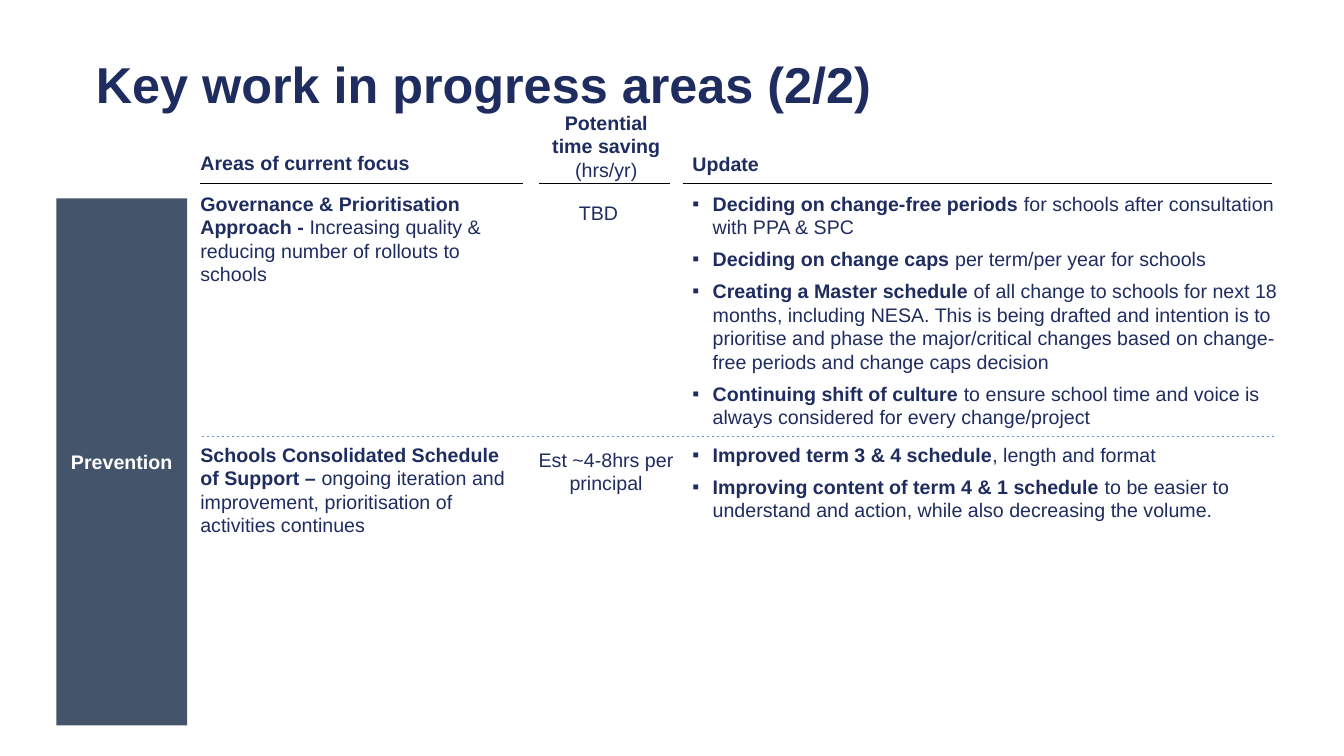
from lxml import etree
from pptx import Presentation
from pptx.dml.color import RGBColor
from pptx.enum import dml, shapes, text
from pptx.oxml import ns
from pptx.util import Cm, Pt

NAVY = RGBColor(0x1F, 0x2C, 0x5F)
SLATE = RGBColor(0x44, 0x54, 0x6A)
BLUE = RGBColor(0x5B, 0x9B, 0xD5)
BLACK = RGBColor(0, 0, 0)
WHITE = RGBColor(255, 255, 255)

# Each paragraph is a (bold, regular) pair.
TITLE = "Key work in progress areas (2/2)"
STAGE = "Prevention"
HEADERS = {
    "focus": [("Areas of current focus", "")],
    "saving": [("Potential time saving", ""), ("", "(hrs/yr)")],
    "update": [("Update", "")],
}
ROWS = [
    {
        "focus": [("Governance & Prioritisation Approach - ",
                   "Increasing quality & reducing number of rollouts to schools")],
        "saving": [("", "TBD")],
        "update": [
            ("Deciding on change-free periods ",
             "for schools after consultation with PPA & SPC"),
            ("Deciding on change caps ", "per term/per year for schools"),
            ("Creating a Master schedule ",
             "of all change to schools for next 18 months, including NESA. This is "
             "being drafted and intention is to prioritise and phase the "
             "major/critical changes based on change-free periods and change caps "
             "decision"),
            ("Continuing shift of culture ",
             "to ensure school time and voice is always considered for every "
             "change/project"),
        ],
    },
    {
        "focus": [("Schools Consolidated Schedule of Support – ",
                   "ongoing iteration and improvement, prioritisation of "
                   "activities continues")],
        "saving": [("", "Est ~4-8hrs per principal")],
        "update": [
            ("Improved term 3 & 4 schedule", ", length and format"),
            ("Improving content of term 4 & 1 schedule ",
             "to be easier to understand and action, while also decreasing the "
             "volume."),
        ],
    },
]

# Centimetres
COLUMNS = {"focus": (5.05, 8.13), "saving": (13.72, 3.12), "update": (17.45, 14.86)}
HEADER_TOPS = {"focus": 3.81, "saving": 2.79, "update": 3.84}
HEADER_RULES = [(5.05, 13.18), (13.59, 16.89), (17.2, 32.05)]
HEADER_RULE_Y = 4.62
ROW_TOPS = [4.83, 11.15]
ROW_HEIGHTS = [6.02, 2.39]
SAVING_BOXES = [(13.08, 5.06, 4.01), (13.08, 11.28, 4.39)]
DIVIDER = (5.08, 32.11, 11.0)
INDENT = 0.51


def write(sp, paragraphs, align=text.PP_ALIGN.LEFT, inset=0):
    tf = sp.text_frame
    tf.word_wrap = True
    tf.auto_size = text.MSO_AUTO_SIZE.NONE
    tf.vertical_anchor = text.MSO_ANCHOR.TOP
    tf.margin_left = tf.margin_right = Cm(inset)
    tf.margin_top = tf.margin_bottom = 0
    for i, parts in enumerate(paragraphs):
        p = tf.paragraphs[0] if i == 0 else tf.add_paragraph()
        p.alignment = align
        p.font.name, p.font.size = "Arial", Pt(14)
        p.font.color.rgb = NAVY
        for words, bold in zip(parts, (True, False)):
            if words:
                r = p.add_run()
                r.text, r.font.bold = words, bold


def place(sp, left, top, width, height):
    sp.left, sp.top, sp.width, sp.height = map(Cm, (left, top, width, height))


def add_text(s, left, top, width, height, paragraphs, **style):
    sp = s.shapes.add_textbox(*map(Cm, (left, top, width, height)))
    write(sp, paragraphs, **style)


def add_rule(s, x1, x2, y, color=BLACK):
    line = s.shapes.add_connector(
        shapes.MSO_CONNECTOR.STRAIGHT, *map(Cm, (x1, y, x2, y)))
    line.line.color.rgb = color
    line.line.width = Pt(0.5)
    etree.SubElement(line._element.spPr, ns.qn("a:effectLst"))
    return line


def add_bullets(sp):
    for p in sp.text_frame.paragraphs:
        p.space_before = Pt(6)
        pPr = p._p.get_or_add_pPr()
        pPr.set("marL", str(Cm(INDENT)))
        pPr.set("indent", str(-Cm(INDENT)))
        bullet = etree.Element(ns.qn("a:buChar"), char="▪")
        pPr.find(ns.qn("a:spcBef")).addnext(bullet)


def add_title(s):
    sp = s.shapes.title
    place(sp, 2.16, 1.73, 29.57, 0.91)
    tf = sp.text_frame
    tf.text = TITLE
    tf.auto_size = text.MSO_AUTO_SIZE.NONE
    tf.vertical_anchor = text.MSO_ANCHOR.MIDDLE
    p = tf.paragraphs[0]
    p.alignment, p.line_spacing = text.PP_ALIGN.LEFT, 0.9
    p.font.name, p.font.size, p.font.bold = "Arial", Pt(36), True
    p.font.color.rgb = NAVY


def add_stage(s):
    sp = s.shapes.add_shape(
        shapes.MSO_SHAPE.RECTANGLE, Cm(1.42), Cm(5.0), Cm(3.3), Cm(13.28))
    sp.shadow.inherit = False
    sp.fill.solid()
    sp.fill.fore_color.rgb = SLATE
    sp.line.fill.background()
    write(sp, [(STAGE, "")], align=text.PP_ALIGN.CENTER, inset=0.25)
    sp.text_frame.vertical_anchor = text.MSO_ANCHOR.MIDDLE
    sp.text_frame.paragraphs[0].font.color.rgb = WHITE


def main():
    prs = Presentation()
    prs.slide_width, prs.slide_height = Cm(33.87), Cm(19.05)
    s = prs.slides.add_slide(prs.slide_layouts.get_by_name("Two Content"))
    add_title(s)
    add_stage(s)

    for name, (left, width) in COLUMNS.items():
        top = HEADER_TOPS[name]
        align = text.PP_ALIGN.CENTER if name == "saving" else text.PP_ALIGN.LEFT
        add_text(s, left, top, width, HEADER_RULE_Y - top, HEADERS[name], align=align)
    for x1, x2 in HEADER_RULES:
        add_rule(s, x1, x2, HEADER_RULE_Y)

    for i, (row, top, height) in enumerate(zip(ROWS, ROW_TOPS, ROW_HEIGHTS)):
        left, width = COLUMNS["focus"]
        add_text(s, left, top, width, height, row["focus"])
        left, saving_top, width = SAVING_BOXES[i]
        add_text(s, left, saving_top, width, 1.2, row["saving"],
                 align=text.PP_ALIGN.CENTER, inset=0.25)
        left, width = COLUMNS["update"]
        body = s.placeholders[i + 1]
        place(body, left, top, width, height)
        write(body, row["update"])
        add_bullets(body)

    add_rule(s, *DIVIDER, color=BLUE).line.dash_style = dml.MSO_LINE.DASH
    prs.save("out.pptx")


if __name__ == "__main__":
    main()
